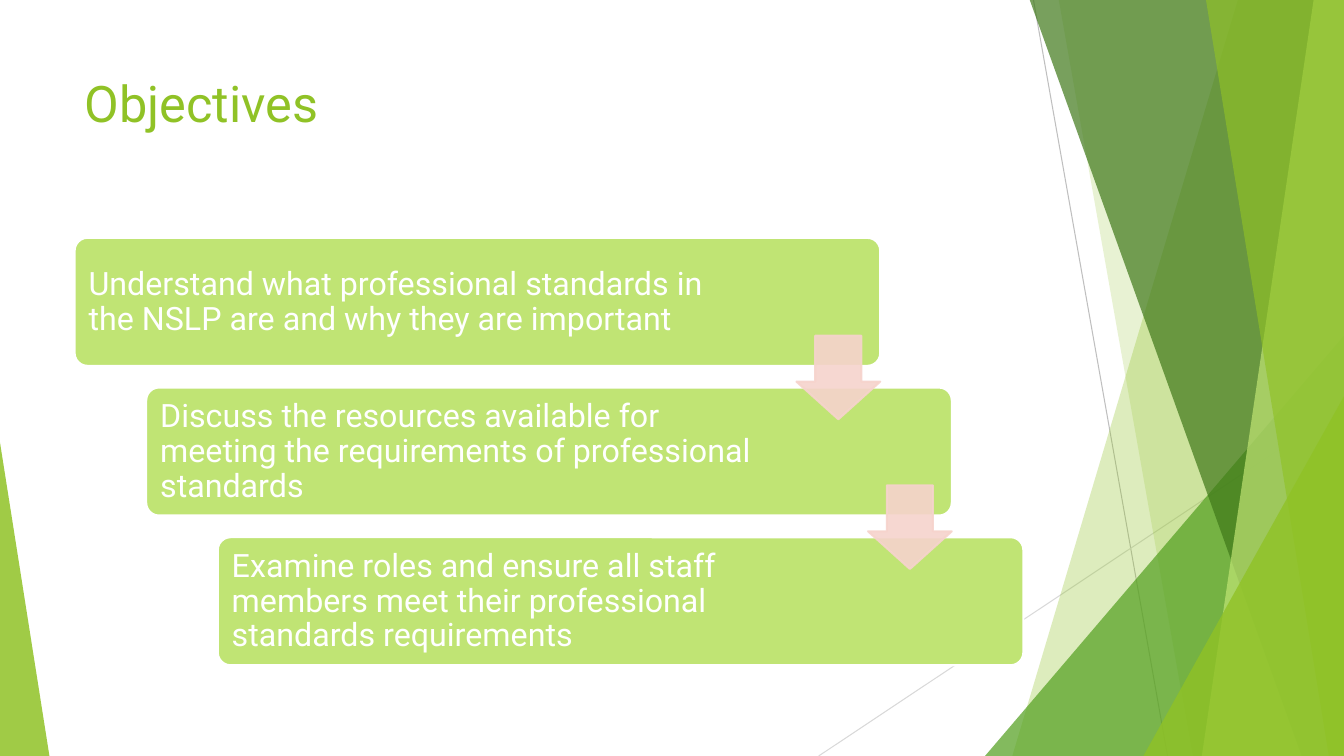
"""Build the Objectives slide: three stepped goals beside a fan of green facets."""
from dataclasses import dataclass

from lxml.etree import SubElement
from pptx import Presentation
from pptx.dml.color import RGBColor
from pptx.enum.shapes import MSO_CONNECTOR, MSO_SHAPE
from pptx.enum.text import MSO_ANCHOR
from pptx.oxml.ns import qn
from pptx.shapes.autoshape import Shape
from pptx.slide import Slide
from pptx.text.text import TextFrame
from pptx.util import Inches, Pt


@dataclass(frozen=True)
class Theme:
    """Hold the colours, font and type sizes."""
    leaf: str = "90C226"
    grass: str = "54A021"
    moss: str = "3F7819"
    lime: str = "C0E474"
    blush: str = "F6D3CC"
    white: str = "FFFFFF"
    grey: str = "BFBFBF"
    mist: str = "D9D9D9"
    font: str = "Roboto"
    head: int = 36
    body: int = 23


@dataclass(frozen=True)
class Box:
    """Give a place in inches."""
    left: float
    top: float
    width: float
    height: float

    def emu(self) -> tuple[int, ...]:
        """Return the place as lengths."""
        return tuple(Inches(n) for n in (self.left, self.top, self.width, self.height))


@dataclass(frozen=True)
class Ray:
    """Describe a thin straight line."""
    start: tuple[float, float]
    end: tuple[float, float]
    color: str


@dataclass(frozen=True)
class Facet:
    """Describe a band from two top points to two bottom points."""
    top: tuple[float, float]
    base: tuple[float, float]
    color: str
    alpha: int


@dataclass(frozen=True)
class Peak:
    """Describe a right triangle with its apex at one side."""
    box: Box
    apex: int
    color: str
    alpha: int


@dataclass(frozen=True)
class Goal:
    """Describe one step and the width of its text."""
    text: str
    width: float


THEME = Theme()
WIDE, HIGH = 13.33, 7.5
RAYS = (
    Ray((10.25, 0), (11.58, HIGH), THEME.grey),
    Ray((WIDE, 4.03), (8.12, HIGH), THEME.mist),
)
DECOR = (
    Facet((12.28, WIDE), (10.04, WIDE), THEME.leaf, 30),
    Facet((10.5, WIDE), (11.83, WIDE), THEME.leaf, 20),
    Peak(Box(9.77, 3.33, 3.56, 4.17), 1, THEME.grass, 72),
    Facet((10.21, WIDE), (12.91, WIDE), THEME.moss, 70),
    Facet((13.03, WIDE), (11.92, WIDE), THEME.lime, 70),
    Facet((11.96, WIDE), (13.18, WIDE), THEME.leaf, 65),
    Peak(Box(11.34, 3.93, 1.99, 3.57), 1, THEME.leaf, 80),
    Peak(Box(0, 4.39, 0.49, 3.11), 0, THEME.leaf, 85),
)
GOALS = (
    Goal("Understand what professional standards in the NSLP are and why they are important", 6.62),
    Goal("Discuss the resources available for meeting the requirements of professional standards", 6.38),
    Goal("Examine roles and ensure all staff members meet their professional standards requirements", 6.38),
)
FIRST = Box(0.74, 2.36, 7.99, 1.27)
STEP = (0.71, 1.485)
ARROW = Box(7.9, 3.33, 0.83, 0.83)


def shift(box: Box, row: int) -> Box:
    """Move a box down the stairs by some rows."""
    return Box(box.left + row * STEP[0], box.top + row * STEP[1], box.width, box.height)


def paint(shape: Shape, color: str, edge: str | None = None, alpha: int = 100) -> None:
    """Set fill, edge and opacity."""
    shape.shadow.inherit = False
    shape.fill.solid()
    shape.fill.fore_color.rgb = RGBColor.from_string(color)
    if edge:
        shape.line.color.rgb = RGBColor.from_string(edge)
        shape.line.width = Pt(1.5)
    else:
        shape.line.fill.background()
    if alpha < 100:
        for tint in list(shape._element.spPr.iter(qn("a:srgbClr"))):
            SubElement(tint, qn("a:alpha")).set("val", str(alpha * 1000))


def add_ray(slide: Slide, ray: Ray) -> None:
    """Draw a thin line."""
    ends = [Inches(n) for n in ray.start + ray.end]
    line = slide.shapes.add_connector(MSO_CONNECTOR.STRAIGHT, *ends)
    line.line.color.rgb = RGBColor.from_string(ray.color)
    line.line.width = Pt(0.75)
    SubElement(line._element.spPr, qn("a:effectLst"))


def add_facet(slide: Slide, facet: Facet) -> None:
    """Draw a band as tall as the slide."""
    (left, right), (west, east) = facet.top, facet.base
    ring = ((left, -0.01), (right, -0.01), (east, HIGH), (west, HIGH))
    dots = [(Inches(x), Inches(y)) for x, y in ring]
    form = slide.shapes.build_freeform(*dots[0])
    form.add_line_segments(dots[1:], close=True)
    paint(form.convert_to_shape(), facet.color, alpha=facet.alpha)


def add_peak(slide: Slide, peak: Peak) -> None:
    """Draw a right triangle."""
    shape = slide.shapes.add_shape(MSO_SHAPE.ISOSCELES_TRIANGLE, *peak.box.emu())
    shape.adjustments[0] = peak.apex
    paint(shape, peak.color, alpha=peak.alpha)


def add_text(slide: Slide, box: Box, text: str, size: int, color: str) -> TextFrame:
    """Place wrapped text and return its frame."""
    frame = slide.shapes.add_textbox(*box.emu()).text_frame
    frame.word_wrap = True
    frame.text = text
    font = frame.paragraphs[0].font
    font.name, font.size = THEME.font, Pt(size)
    font.color.rgb = RGBColor.from_string(color)
    return frame


def add_goal(slide: Slide, goal: Goal, row: int) -> None:
    """Draw one step with its text."""
    box = shift(FIRST, row)
    card = slide.shapes.add_shape(MSO_SHAPE.ROUNDED_RECTANGLE, *box.emu())
    card.adjustments[0] = 0.1
    paint(card, THEME.lime, THEME.white)
    inner = Box(box.left + 0.04, box.top + 0.04, goal.width, 1.2)
    frame = add_text(slide, inner, goal.text, THEME.body, THEME.white)
    frame.vertical_anchor = MSO_ANCHOR.MIDDLE
    frame.margin_left = frame.margin_right = Inches(0.1)
    frame.margin_top = frame.margin_bottom = Inches(0.1)
    frame.paragraphs[0].line_spacing = 0.9


def add_arrow(slide: Slide, row: int) -> None:
    """Draw the arrow that leads to the next step."""
    arrow = slide.shapes.add_shape(MSO_SHAPE.DOWN_ARROW, *shift(ARROW, row).emu())
    arrow.adjustments[0], arrow.adjustments[1] = 0.55, 0.45
    paint(arrow, THEME.blush, THEME.blush, 90)


def main() -> None:
    """Build and save the slide."""
    deck = Presentation()
    deck.slide_width, deck.slide_height = Inches(WIDE), Inches(HIGH)
    slide = deck.slides.add_slide(deck.slide_layouts[6])
    for ray in RAYS:
        add_ray(slide, ray)
    for part in DECOR:
        if isinstance(part, Facet):
            add_facet(slide, part)
        else:
            add_peak(slide, part)
    add_text(slide, Box(0.74, 0.67, 9.4, 1.44), "Objectives", THEME.head, THEME.leaf)
    for row, goal in enumerate(GOALS):
        add_goal(slide, goal, row)
    for row in range(len(GOALS) - 1):
        add_arrow(slide, row)
    deck.save("out.pptx")


if __name__ == "__main__":
    main()
